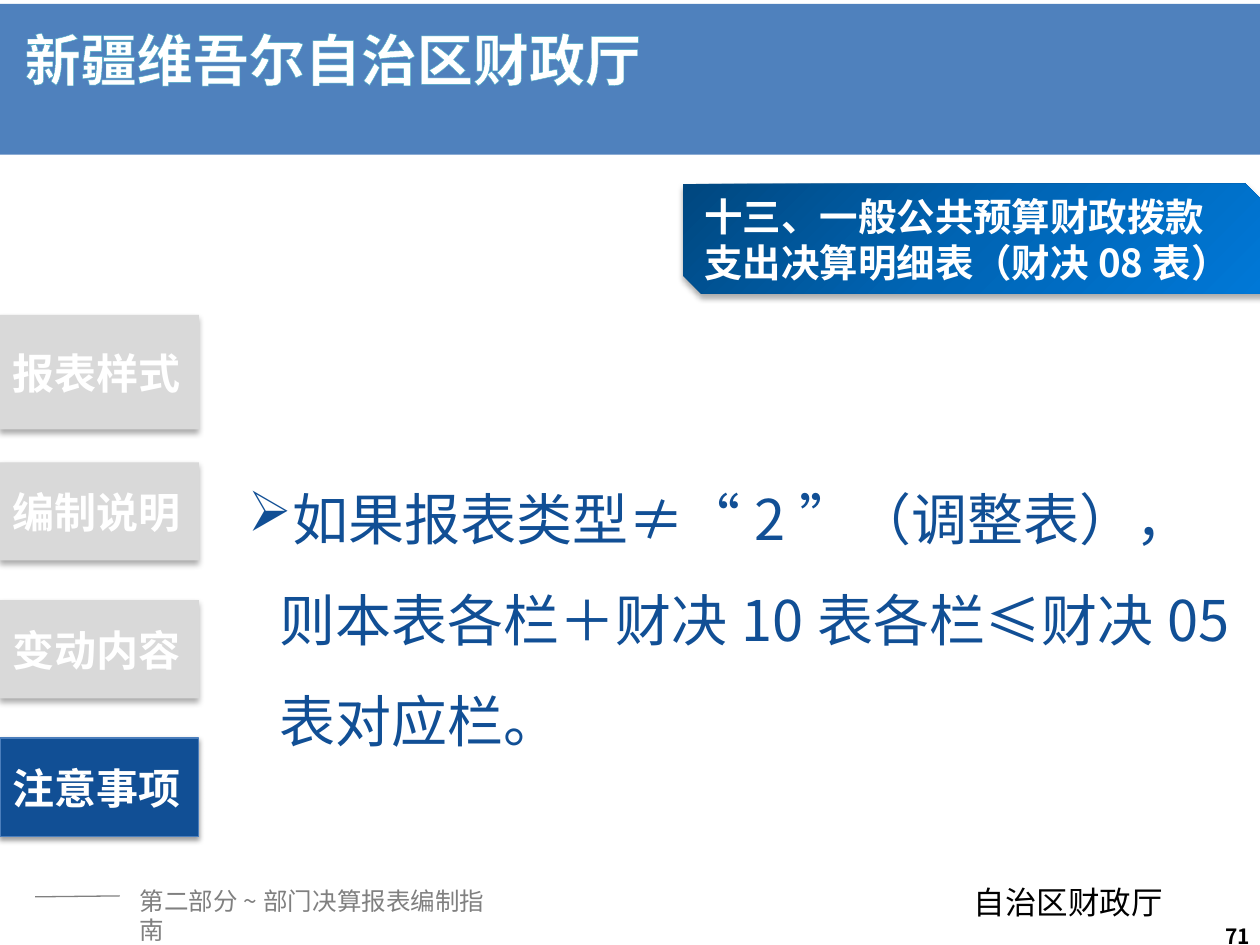
"""Build the notes slide for the budget expenditure detail table."""
from dataclasses import dataclass

from lxml import etree
from pptx import Presentation
from pptx.dml.color import RGBColor
from pptx.enum.shapes import MSO_CONNECTOR, MSO_SHAPE
from pptx.enum.text import MSO_ANCHOR, PP_ALIGN
from pptx.oxml import parse_xml
from pptx.oxml.ns import qn
from pptx.util import Cm, Pt

RECT = MSO_SHAPE.RECTANGLE
SNIPPED = MSO_SHAPE.SNIP_2_DIAG_RECTANGLE
STRAIGHT = MSO_CONNECTOR.STRAIGHT
TOP, MIDDLE = MSO_ANCHOR.TOP, MSO_ANCHOR.MIDDLE
LEFT, RIGHT = PP_ALIGN.LEFT, PP_ALIGN.RIGHT
FONT = "Noto Sans CJK SC"
NS = 'xmlns:a="http://schemas.openxmlformats.org/drawingml/2006/main"'
WHITE, BLACK, GREY = "FFFFFF", "000000", "808080"
BAND, NAVY, PALE = "4F81BD", "114F95", "D9D9D9"
TAB_WIDTH, TAB_HEIGHT, TAB_PITCH = 4.01, 1.98, 2.78


@dataclass
class Box:
    left: float
    top: float
    width: float
    height: float

    def lengths(self):
        return [Cm(v) for v in (self.left, self.top, self.width, self.height)]


@dataclass
class Style:
    size: float
    color: str
    bold: bool = False
    anchor: int = TOP
    align: int = LEFT
    wrap: bool = True


@dataclass
class Shadow:
    alpha: int
    blur: float
    dist: float


@dataclass
class Tab:
    text: str
    box: Box
    fill: str = PALE
    line: str = ""
    shadow: Shadow = None


SOFT = Shadow(32, 3.5, 2.2)
TIGHT = Shadow(38, 3.1, 1.6)
LABEL = Style(24, WHITE, True, MIDDLE)
TABS = [
    Tab("报表样式", Box(0, 6.35, TAB_WIDTH, 2.31), shadow=SOFT),
    *(Tab(text, Box(0, 9.32 + i * TAB_PITCH, TAB_WIDTH, TAB_HEIGHT), shadow=SOFT)
      for i, text in enumerate(("编制说明", "变动内容"))),
    Tab("注意事项", Box(0, 9.32 + 2 * TAB_PITCH, TAB_WIDTH, TAB_HEIGHT), NAVY, "4B7EBC", TIGHT),
]


def rgb(value: str) -> RGBColor:
    return RGBColor.from_string(value)


def write(s, text: str, style: Style):
    tf = s.text_frame
    tf.text = text
    tf.word_wrap = style.wrap
    tf.vertical_anchor = style.anchor
    p = tf.paragraphs[0]
    p.alignment = style.align
    r = p.runs[0]
    r.font.size, r.font.bold, r.font.name = Pt(style.size), style.bold, FONT
    r.font.color.rgb = rgb(style.color)
    etree.SubElement(r.font._element, qn("a:ea")).set("typeface", FONT)
    return p


def add_text(sp, box: Box, text: str, style: Style):
    return write(sp.add_textbox(*box.lengths()), text, style)


def add_block(sp, kind: int, box: Box, fill: str, line: str = "", shadow: Shadow = None):
    s = sp.add_shape(kind, *box.lengths())
    s.shadow.inherit = False
    s.fill.solid()
    s.fill.fore_color.rgb = rgb(fill)
    if line:
        s.line.color.rgb, s.line.width = rgb(line), Pt(0.75)
    else:
        s.line.fill.background()
    if shadow:
        s._element.spPr.find(qn("a:effectLst")).append(parse_xml(
            f'<a:outerShdw {NS} blurRad="{Pt(shadow.blur)}" dist="{Pt(shadow.dist)}" '
            f'dir="5400000" algn="t" rotWithShape="0"><a:srgbClr val="{BLACK}">'
            f'<a:alpha val="{shadow.alpha * 1000}"/></a:srgbClr></a:outerShdw>'))
    return s


def set_gradient(s, stops: list):
    spPr = s._element.spPr
    marks = "".join(f'<a:gs pos="{pos * 1000}"><a:srgbClr val="{color}"/></a:gs>'
                    for pos, color in stops)
    spPr.replace(spPr.find(qn("a:solidFill")), parse_xml(
        f'<a:gradFill {NS} rotWithShape="1"><a:gsLst>{marks}</a:gsLst>'
        '<a:lin ang="2700000" scaled="0"/></a:gradFill>'))


def add_header(sp):
    add_block(sp, RECT, Box(0, 0.58, 25.4, 2.54), BAND)
    add_block(sp, RECT, Box(0, 0.08, 25.43, 2.21), BAND)
    p = add_text(sp, Box(0.25, 0.38, 14.38, 1.63), "新疆维吾尔自治区财政厅", Style(32, WHITE, True))
    p.runs[0].font._element.insert(0, parse_xml(
        f'<a:ln {NS} w="{Pt(0.8)}"><a:solidFill><a:srgbClr val="4BACC6"/></a:solidFill></a:ln>'))
    s = add_block(sp, SNIPPED, Box(13.77, 3.71, 11.71, 2.21), NAVY, shadow=SOFT)
    set_gradient(s, [(0, "00477F"), (50, "0065B5"), (100, "0078D7")])
    write(s, "十三、一般公共预算财政拨款支出决算明细表（财决08表）", Style(22, WHITE, True, MIDDLE))


def add_body(sp):
    s = sp.add_textbox(*Box(4.75, 6.93, 20.65, 8.46).lengths())
    s.text_frame.margin_top = Cm(2.16)
    p = write(s, "如果报表类型≠“2”（调整表），则本表各栏＋财决10表各栏≤财决05表对应栏。", Style(32, NAVY))
    p.line_spacing = 1.5
    pPr = p._p.get_or_add_pPr()
    pPr.set("marL", str(Cm(0.64)))
    pPr.set("indent", str(-Cm(0.64)))
    etree.SubElement(pPr, qn("a:buChar")).set("char", "➢")


def add_footer(sp):
    add_text(sp, Box(19.38, 17.68, 4.32, 1.02), "自治区财政厅", Style(18, BLACK, wrap=False))
    rule = sp.add_connector(STRAIGHT, Cm(0.71), Cm(18.08), Cm(2.41), Cm(18.06))
    rule.line.color.rgb, rule.line.width = rgb(GREY), Pt(0.75)
    etree.SubElement(rule._element.spPr, qn("a:effectLst"))
    add_text(sp, Box(2.57, 17.73, 7.82, 0.86), "第二部分~部门决算报表编制指南", Style(14, GREY))
    add_text(sp, Box(19.53, 18.36, 5.92, 1.02), "71", Style(12, BLACK, True, MIDDLE, RIGHT))


def main():
    prs = Presentation()
    prs.slide_width, prs.slide_height = Cm(25.4), Cm(19.05)
    sp = prs.slides.add_slide(prs.slide_layouts[6]).shapes
    add_header(sp)
    for tab in TABS:
        write(add_block(sp, RECT, tab.box, tab.fill, tab.line, tab.shadow), tab.text, LABEL)
    add_body(sp)
    add_footer(sp)
    prs.save("out.pptx")


if __name__ == "__main__":
    main()
